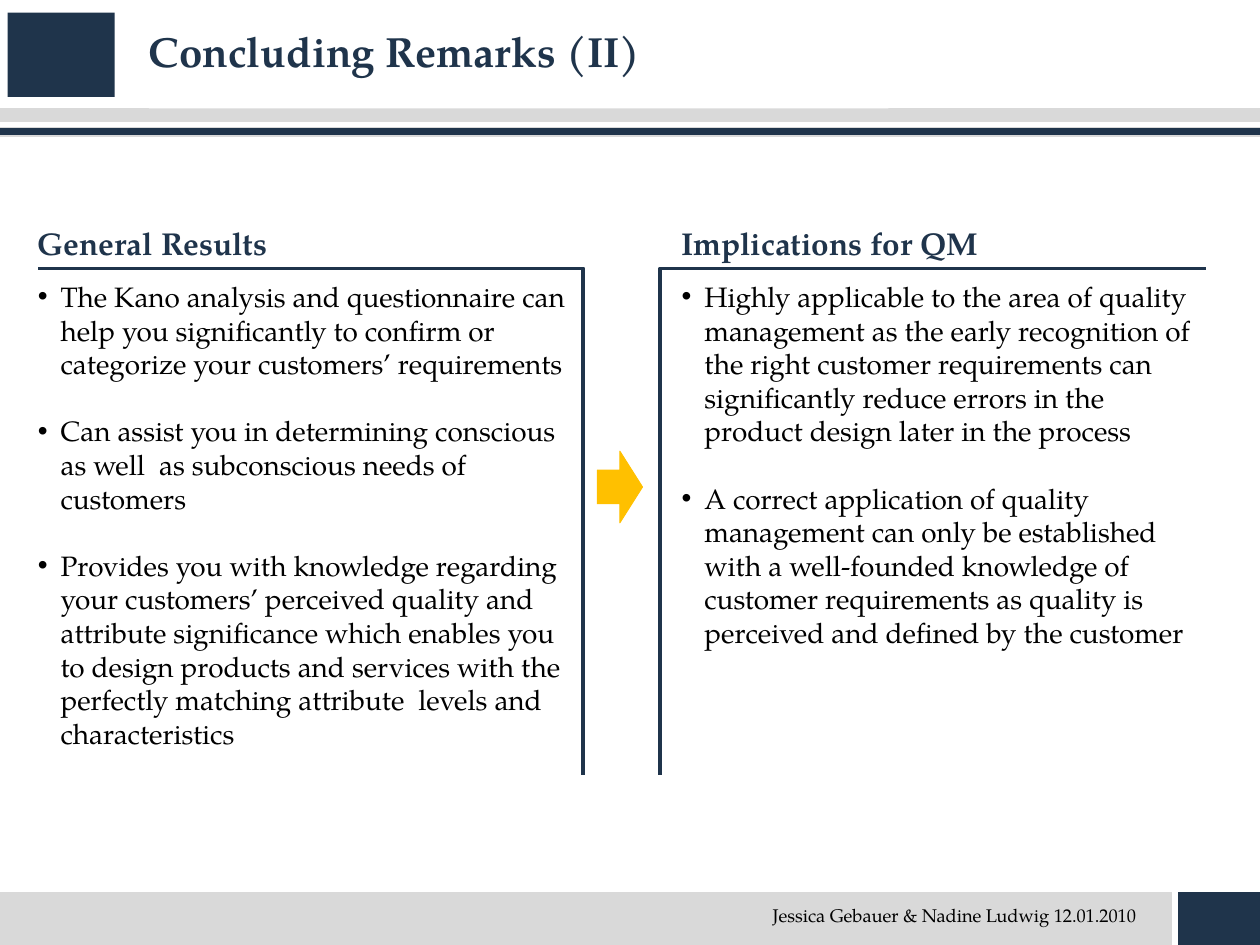
"""Build the concluding remarks slide with two bulleted columns."""

from dataclasses import dataclass

from lxml.etree import SubElement
from pptx import Presentation
from pptx.dml.color import RGBColor
from pptx.enum.shapes import MSO_SHAPE
from pptx.enum.text import MSO_ANCHOR, MSO_AUTO_SIZE, PP_ALIGN
from pptx.oxml.ns import qn
from pptx.util import Pt

COLORS = {
    "navy": "1F344B",
    "gray": "D9D9D9",
    "white": "FFFFFF",
    "black": "000000",
    "amber": "FFC000",
}
FONT = "TeX Gyre Pagella"
RULE_TOP, RULE_BOTTOM = 153.4, 442.8


@dataclass
class Block:
    left: float
    top: float
    width: float
    height: float
    fill: str
    outline: str = ""
    weight: float = 0
    preset: MSO_SHAPE = MSO_SHAPE.RECTANGLE
    adjustments: tuple[float, ...] = ()


@dataclass
class Column:
    heading: str
    remarks: list[str]
    left: float
    heading_width: float
    remarks_width: float
    remarks_height: float
    rule_side: float
    rule_end: float
    first_placeholder: int


BANDS = [
    Block(0, 509.8, 669.6, 30.2, "gray", "gray", 0.75),
    Block(673.2, 509.8, 46.8, 30.2, "navy"),
    Block(4.3, 7.2, 61.2, 48.2, "navy"),
    Block(-3.6, 72.7, 733.7, 5, "navy", "gray", 0.75),
    Block(-10.1, 62.6, 733.7, 5.8, "gray", "gray", 2.25),
]
ARROW = Block(341.3, 257.8, 25.9, 41, "amber", "amber", 0.5,
              MSO_SHAPE.RIGHT_ARROW, (0.47, 0.5))

COLUMNS = [
    Column(
        "General Results",
        [
            "The Kano analysis and questionnaire can help you significantly to "
            "confirm or categorize your customers’ requirements",
            "Can assist you in determining conscious as well  as subconscious "
            "needs of customers",
            "Provides you with knowledge regarding your customers’ perceived "
            "quality and attribute significance which enables you to design "
            "products and services with the perfectly matching attribute  "
            "levels and characteristics",
        ],
        21.6, 311.8, 301.7, 329.8, 333.4, 21.6, 1,
    ),
    Column(
        "Implications for QM",
        [
            "Highly applicable to the area of quality management as the early "
            "recognition of the right customer requirements can significantly "
            "reduce errors in the product design later in the process",
            "A correct application of quality management can only be "
            "established with a well-founded knowledge of customer "
            "requirements as quality is perceived and defined by the customer",
        ],
        389.5, 330.5, 294.5, 232.6, 377.3, 689, 3,
    ),
]


def rgb(color: str) -> RGBColor:
    return RGBColor.from_string(COLORS[color])


def place(shape, left: float, top: float, width: float, height: float) -> None:
    shape.left, shape.top = Pt(left), Pt(top)
    shape.width, shape.height = Pt(width), Pt(height)


def write_text(shape, *paragraphs: str, size: float, color: str = "black",
               bold: bool = False, align: PP_ALIGN = PP_ALIGN.LEFT,
               anchor: MSO_ANCHOR = MSO_ANCHOR.TOP, gap: float = 0,
               bulleted: bool = False) -> None:
    frame = shape.text_frame
    frame.word_wrap = True
    frame.auto_size = MSO_AUTO_SIZE.NONE
    frame.vertical_anchor = anchor
    frame.margin_left = frame.margin_right = Pt(0)
    frame.margin_top = frame.margin_bottom = Pt(0)
    for position, text in enumerate(paragraphs):
        paragraph = frame.add_paragraph() if position else frame.paragraphs[0]
        paragraph.alignment = align
        paragraph.space_before = Pt(gap if position else 0)
        run = paragraph.add_run()
        run.text = text
        run.font.name = FONT
        run.font.size = Pt(size)
        run.font.bold = bold
        run.font.color.rgb = rgb(color)
        if bulleted:
            properties = paragraph._p.get_or_add_pPr()
            properties.set("marL", str(Pt(13)))
            properties.set("indent", str(Pt(-13)))
            SubElement(properties, qn("a:buChar")).set("char", "•")


def draw_block(slide, block: Block) -> None:
    shape = slide.shapes.add_shape(block.preset, Pt(block.left), Pt(block.top),
                                   Pt(block.width), Pt(block.height))
    shape.shadow.inherit = False
    shape.fill.solid()
    shape.fill.fore_color.rgb = rgb(block.fill)
    if block.outline:
        shape.line.color.rgb = rgb(block.outline)
        shape.line.width = Pt(block.weight)
    else:
        shape.line.fill.background()
    for position, value in enumerate(block.adjustments):
        shape.adjustments[position] = value


def draw_column(slide, column: Column) -> None:
    heading = slide.placeholders[column.first_placeholder]
    place(heading, column.left, 128.2, column.heading_width, 21.6)
    write_text(heading, column.heading, size=18, color="navy", bold=True,
               anchor=MSO_ANCHOR.MIDDLE)

    remarks = slide.placeholders[column.first_placeholder + 1]
    place(remarks, column.left, 159.8, column.remarks_width, column.remarks_height)
    write_text(remarks, *column.remarks, size=16, gap=19.2, bulleted=True)

    outline = slide.shapes.build_freeform(Pt(column.rule_side), Pt(RULE_BOTTOM))
    outline.add_line_segments(
        [(Pt(column.rule_side), Pt(RULE_TOP)), (Pt(column.rule_end), Pt(RULE_TOP))],
        close=False,
    )
    rule = outline.convert_to_shape()
    rule.shadow.inherit = False
    rule.fill.background()
    rule.line.color.rgb = rgb("navy")
    rule.line.width = Pt(2.25)


def main() -> None:
    deck = Presentation()
    deck.slide_width, deck.slide_height = Pt(720), Pt(540)
    slide = deck.slides.add_slide(deck.slide_layouts.get_by_name("Comparison"))

    for band in BANDS:
        draw_block(slide, band)

    credit = slide.shapes.add_textbox(Pt(381.6), Pt(521.3), Pt(267.8), Pt(7.9))
    write_text(credit, "Jessica Gebauer & Nadine Ludwig 12.01.2010", size=10.5,
               align=PP_ALIGN.RIGHT, anchor=MSO_ANCHOR.BOTTOM)

    title = slide.shapes.title
    place(title, 85, 14.4, 422.6, 47.5)
    title.fill.solid()
    title.fill.fore_color.rgb = rgb("white")
    write_text(title, "Concluding Remarks (II)", size=24, color="navy", bold=True)
    slide.shapes._spTree.append(title._element)

    for column in COLUMNS:
        draw_column(slide, column)
    draw_block(slide, ARROW)
    deck.save("out.pptx")


if __name__ == "__main__":
    main()
